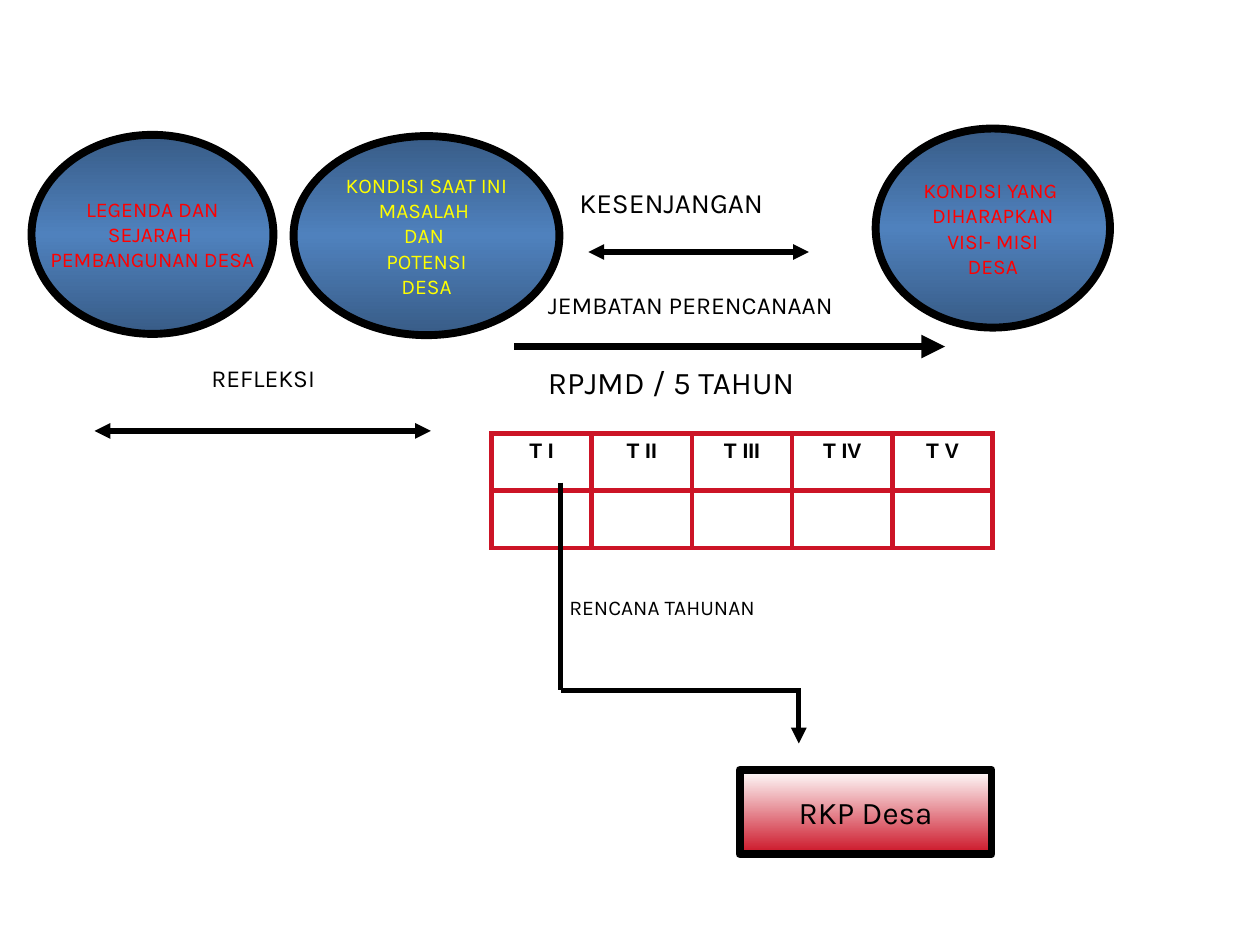
from dataclasses import dataclass

from lxml import etree
from pptx import Presentation
from pptx.dml.color import RGBColor
from pptx.enum.shapes import MSO_CONNECTOR, MSO_SHAPE
from pptx.enum.text import MSO_ANCHOR, MSO_AUTO_SIZE, PP_ALIGN
from pptx.oxml import parse_xml
from pptx.oxml.ns import nsdecls, qn
from pptx.util import Inches, Pt

ELLIPSE, RECTANGLE = MSO_SHAPE.OVAL, MSO_SHAPE.RECTANGLE
STRAIGHT = MSO_CONNECTOR.STRAIGHT
CENTER, LEFT = PP_ALIGN.CENTER, PP_ALIGN.LEFT
MIDDLE = MSO_ANCHOR.MIDDLE
GROW = MSO_AUTO_SIZE.SHAPE_TO_FIT_TEXT


@dataclass(frozen=True)
class Theme:
    font: str = "Karla"
    table_font: str = "Arial"
    ink: str = "000000"
    white: str = "FFFFFF"
    red: str = "FF0000"
    yellow: str = "FFFF00"
    blue: str = "4F81BD"
    crimson: str = "CC1426"
    edge_shade: int = 46275
    small: int = 12
    label: int = 14
    heading: int = 16
    large: int = 18
    thin: float = 3
    thick: float = 4.5


class PlanSlide:
    """Draws the elements of the village planning slide in one theme."""

    def __init__(self, slide, theme):
        self.slide = slide
        self.theme = theme

    def add_lines(self, frame, lines, size, color, align):
        frame.word_wrap = False
        for index, line in enumerate(lines):
            paragraph = frame.paragraphs[0] if index == 0 else frame.add_paragraph()
            paragraph.alignment = align
            self.add_run(paragraph, line, size, color, self.theme.font)

    def add_run(self, paragraph, text, size, color, font, bold=False):
        run = paragraph.add_run()
        run.text = text
        run.font.name = font
        run.font.size = Pt(size)
        run.font.bold = bold
        run.font.color.rgb = RGBColor.from_string(color)

    def gradient(self, shape, stops):
        shape.fill.background()
        marks = "".join(
            f'<a:gs pos="{position * 1000}"><a:srgbClr val="{color}">'
            + (f'<a:shade val="{shade}"/>' if shade else "")
            + "</a:srgbClr></a:gs>"
            for position, color, shade in stops
        )
        fill = parse_xml(
            f'<a:gradFill {nsdecls("a")} rotWithShape="1"><a:gsLst>{marks}</a:gsLst>'
            '<a:lin ang="5400000" scaled="1"/></a:gradFill>'
        )
        properties = shape._element.spPr
        properties.replace(properties.find(qn("a:noFill")), fill)

    def block(self, kind, box, stops, lines, size, color):
        shape = self.slide.shapes.add_shape(kind, *map(Inches, box))
        shape.shadow.inherit = False
        self.gradient(shape, stops)
        shape.line.color.rgb = RGBColor.from_string(self.theme.ink)
        shape.line.width = Pt(self.theme.thick)
        shape.text_frame.vertical_anchor = MIDDLE
        self.add_lines(shape.text_frame, lines, size, color, CENTER)

    def bubble(self, box, lines, color):
        blue, shade = self.theme.blue, self.theme.edge_shade
        stops = [(0, blue, shade), (50, blue, None), (100, blue, shade)]
        self.block(ELLIPSE, box, stops, lines, self.theme.small, color)

    def label(self, box, text, size):
        frame = self.slide.shapes.add_textbox(*map(Inches, box)).text_frame
        self.add_lines(frame, [text], size, self.theme.ink, LEFT)
        frame.auto_size = GROW

    def line(self, start, end, width, arrows=()):
        connector = self.slide.shapes.add_connector(STRAIGHT, *map(Inches, start + end))
        connector.line.color.rgb = RGBColor.from_string(self.theme.ink)
        connector.line.width = Pt(width)
        outline = connector._element.spPr.find(qn("a:ln"))
        for arrow in arrows:
            etree.SubElement(outline, qn(f"a:{arrow}"), type="triangle")
        etree.SubElement(connector._element.spPr, qn("a:effectLst"))

    def cell_borders(self, cell):
        properties = cell._tc.get_or_add_tcPr()
        for side in ("lnL", "lnR", "lnT", "lnB"):
            properties.append(parse_xml(
                f'<a:{side} {nsdecls("a")} w="{Pt(self.theme.thin)}"><a:solidFill>'
                f'<a:srgbClr val="{self.theme.crimson}"/></a:solidFill></a:{side}>'
            ))

    def year_table(self, box, years):
        table = self.slide.shapes.add_table(2, len(years), *map(Inches, box)).table
        table.first_row = table.horz_banding = False
        for cell in table.iter_cells():
            self.cell_borders(cell)
            cell.fill.background()
        for column, year in enumerate(years):
            paragraph = table.cell(0, column).text_frame.paragraphs[0]
            paragraph.alignment = CENTER
            paragraph.space_before = Pt(0.2 * self.theme.small)
            self.add_run(paragraph, year, self.theme.small, self.theme.ink,
                         self.theme.table_font, bold=True)


def main():
    presentation = Presentation()
    presentation.slide_width, presentation.slide_height = Inches(10), Inches(7.5)
    theme = Theme()
    plan = PlanSlide(presentation.slides.add_slide(presentation.slide_layouts[6]), theme)
    end_arrow, both_arrows = ("tailEnd",), ("headEnd", "tailEnd")

    plan.bubble((0.25, 1.07, 1.92, 1.58),
                ["LEGENDA DAN", "SEJARAH ", "PEMBANGUNAN DESA"], theme.red)
    plan.bubble((2.33, 1.08, 2.11, 1.58),
                ["KONDISI SAAT INI", "MASALAH ", "DAN ", "POTENSI", "DESA"], theme.yellow)
    plan.bubble((6.95, 1.02, 1.86, 1.58),
                ["KONDISI YANG ", "DIHARAPKAN", "VISI- MISI", "DESA"], theme.red)

    plan.line((4.67, 2), (6.42, 2), theme.thin, both_arrows)
    plan.label((4.5, 1.42, 1.87, 0.37), "KESENJANGAN", theme.heading)
    plan.line((4.08, 2.75), (7.5, 2.75), theme.thick, end_arrow)
    plan.label((4.25, 2.25, 2.81, 0.33), "JEMBATAN PERENCANAAN", theme.label)
    plan.label((4.25, 2.83, 2.9, 0.5), "RPJMD / 5 TAHUN", theme.large)

    plan.year_table((3.9, 3.44, 3.98, 0.91), ["T I", "T II", "T III", "T IV", "T V"])

    plan.line((4.45, 3.83), (4.45, 5.48), theme.thin)
    plan.line((4.45, 5.48), (6.36, 5.48), theme.thin)
    plan.line((6.34, 5.48), (6.34, 5.9), theme.thin, end_arrow)
    plan.block(RECTANGLE, (5.87, 6.11, 2, 0.67),
               [(0, theme.white, None), (100, theme.crimson, None)],
               ["RKP Desa"], theme.large, theme.ink)
    plan.label((4.42, 4.67, 1.91, 0.3), "RENCANA TAHUNAN", theme.small)

    plan.line((0.75, 3.42), (3.42, 3.42), theme.thin, both_arrows)
    plan.label((1.58, 2.83, 1.16, 0.33), "REFLEKSI", theme.label)

    presentation.save("out.pptx")


if __name__ == "__main__":
    main()
